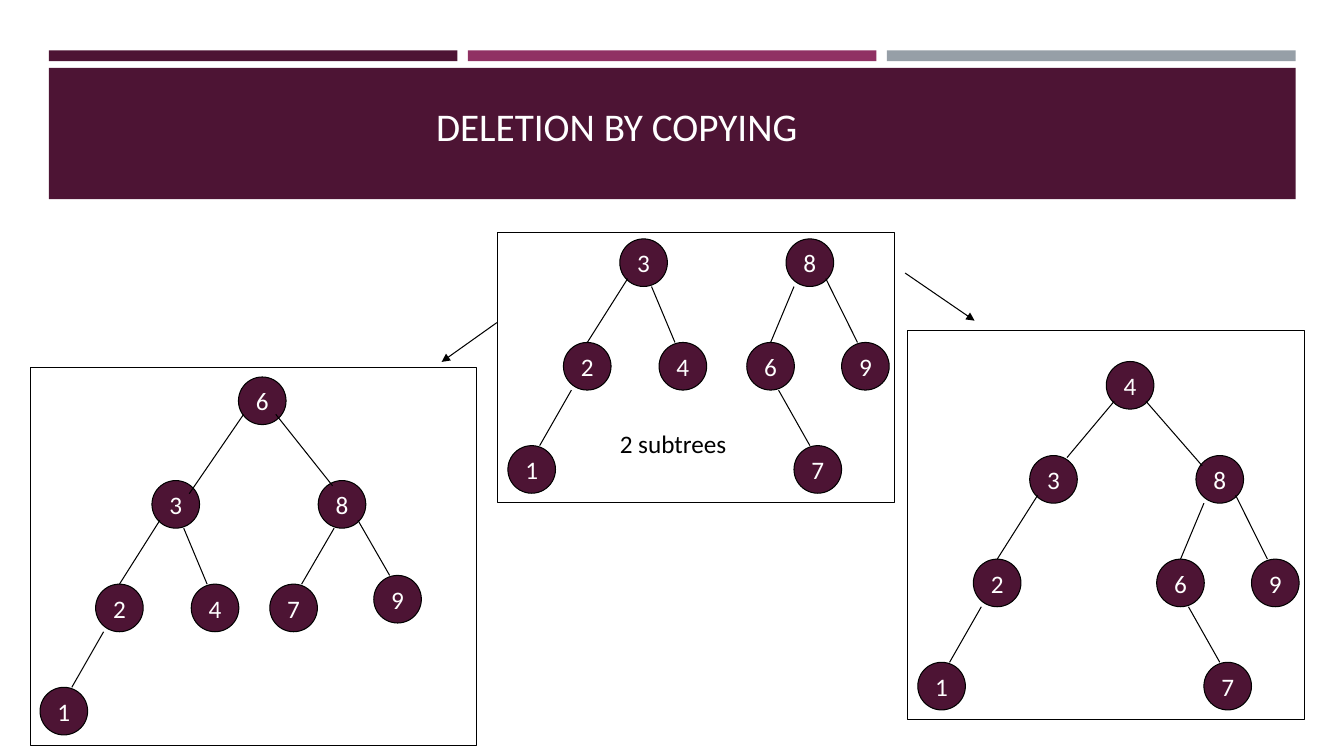
import pptx
import pptx.util
import pptx.dml.color
import pptx.enum.shapes
import pptx.enum.text
import pptx.oxml.ns
from lxml import etree

Cm, Pt = pptx.util.Cm, pptx.util.Pt
RGBColor = pptx.dml.color.RGBColor
PLUM = RGBColor(0x4D, 0x14, 0x34)
MAGENTA = RGBColor(0x90, 0x31, 0x63)
GREY = RGBColor(0x96, 0x9F, 0xA7)
WHITE = RGBColor(0xFF, 0xFF, 0xFF)
BLACK = RGBColor(0, 0, 0)

RADIUS = 0.6
SHAPE = pptx.enum.shapes.MSO_SHAPE
ANCHOR = pptx.enum.text.MSO_ANCHOR
ALIGN = pptx.enum.text.PP_ALIGN

# Node centres within a panel, measured from the row of 3 and 8
SUBTREE_NODES = {
    "3": (3.67, 0), "8": (7.86, 0), "6": (6.87, 2.61), "4": (4.66, 2.61),
    "2": (2.25, 2.61), "9": (9.26, 2.61), "1": (0.85, 5.21), "7": (8.06, 5.21),
}
# Parent, child, start from the parent's centre, end from the child's centre
LEFT_EDGES = [
    ("3", "2", (-0.4, 0.4), (0, -0.6)),
    ("2", "1", (-0.4, 0.6), (0.2, -0.6)),
]
EDGE_3_TO_4 = ("3", "4", (0.2, 0.6), (-0.2, -0.6))
EDGE_8_TO_9 = ("8", "9", (0.4, 0.4), (-0.2, -0.6))
RIGHT_EDGES = [
    ("8", "6", (-0.4, 0.6), (0, -0.6)),
    EDGE_8_TO_9,
    ("6", "7", (0.2, 0.6), (-0.2, -0.6)),
]
MERGED_AT_6_EDGES = [
    ("6", "3", (-0.47, 0.34), (0.34, -0.27)),
    ("6", "8", (0.34, 0.34), (-0.24, -0.47)),
    ("8", "7", (-0.2, 0.6), (0.2, -0.6)),
    EDGE_8_TO_9,
]
MERGED_AT_4_EDGES = [
    ("4", "3", (-0.4, 0.4), (0.34, -0.55)),
    ("4", "8", (0.4, 0.4), (-0.44, -0.34)),
]


def write(frame, wording, size, colour):
    run = frame.paragraphs[0].add_run()
    run.text = wording
    run.font.size = Pt(size)
    run.font.name = "Calibri"
    run.font.color.rgb = colour


def add_block(slide, kind, box, fill=None, outline=None):
    block = slide.shapes.add_shape(kind, *map(Cm, box))
    block.shadow.inherit = False
    if fill is None:
        block.fill.background()
    else:
        block.fill.solid()
        block.fill.fore_color.rgb = fill
    if outline is None:
        block.line.fill.background()
    else:
        block.line.color.rgb = outline
        block.line.width = Pt(0.75)
    return block


def add_line(slide, start, end, arrow=False):
    line = slide.shapes.add_connector(
        pptx.enum.shapes.MSO_CONNECTOR.STRAIGHT, *map(Cm, (*start, *end)))
    line.line.color.rgb = BLACK
    line.line.width = Pt(0.75)
    qn = pptx.oxml.ns.qn
    if arrow:
        etree.SubElement(line.line._get_or_add_ln(), qn("a:tailEnd"), type="triangle")
    etree.SubElement(line._element.spPr, qn("a:effectLst"))


def add_label(slide, box, wording, size, colour, anchor):
    frame = slide.shapes.add_textbox(*map(Cm, box)).text_frame
    frame.word_wrap = True
    frame.vertical_anchor = anchor
    write(frame, wording, size, colour)


def add_node(slide, centre, key):
    x, y = centre
    node = add_block(slide, SHAPE.OVAL,
                     (x - RADIUS, y - RADIUS, 2 * RADIUS, 2 * RADIUS), PLUM, BLACK)
    frame = node.text_frame
    frame.word_wrap = False
    frame.vertical_anchor = ANCHOR.MIDDLE
    frame.paragraphs[0].alignment = ALIGN.CENTER
    write(frame, key, 18, WHITE)


def add_header(slide, box):
    left, top, width, height = box
    gap = 0.26
    stripe_width = (width - 2 * gap) / 3
    for column, colour in enumerate((PLUM, MAGENTA, GREY)):
        add_block(slide, SHAPE.RECTANGLE,
                  (left + column * (stripe_width + gap), top, stripe_width, 0.27), colour)
    add_block(slide, SHAPE.RECTANGLE, (left, top + 0.44, width, height - 0.44), PLUM)
    add_label(slide, (left + 9.51, top - 0.56, 22.86, 3.18),
              "DELETION BY COPYING", 28, WHITE, ANCHOR.BOTTOM)


def add_tree_panel(slide, box, row_top, edges, moved=None):
    """Frame a tree; row_top places the row of 3 and 8, moved overrides node places."""
    left, top = box[:2]
    add_block(slide, SHAPE.RECTANGLE, box, outline=BLACK)
    places = {**SUBTREE_NODES, **(moved or {})}
    centres = {key: (left + x, top + row_top + y) for key, (x, y) in places.items()}
    for key, centre in centres.items():
        add_node(slide, centre, key)
    for parent, child, start, end in edges:
        add_line(slide,
                 [c + d for c, d in zip(centres[parent], start)],
                 [c + d for c, d in zip(centres[child], end)])


def add_subtrees_panel(slide, box):
    add_tree_panel(slide, box, 0.75, LEFT_EDGES + [EDGE_3_TO_4] + RIGHT_EDGES)
    add_label(slide, (box[0] + 2.82, box[1] + 4.8, 3.2, 1.02),
              "2 subtrees", 18, BLACK, ANCHOR.TOP)


def main():
    deck = pptx.Presentation()
    deck.slide_width, deck.slide_height = Cm(33.87), Cm(19.05)
    slide = deck.slides.add_slide(deck.slide_layouts[6])

    add_header(slide, (1.23, 1.27, 31.42, 3.75))
    add_subtrees_panel(slide, (12.55, 5.87, 10, 6.8))
    add_tree_panel(slide, (22.88, 8.33, 10, 9.8), 3.75,
                   LEFT_EDGES + RIGHT_EDGES + MERGED_AT_4_EDGES,
                   {"4": (5.6, -2.37)})
    add_tree_panel(slide, (0.76, 9.25, 11.25, 9.53), 3.46,
                   LEFT_EDGES + [EDGE_3_TO_4] + MERGED_AT_6_EDGES,
                   {"6": (5.85, -2.61), "7": (6.64, 2.61), "9": (9.26, 2.39)})
    add_line(slide, (22.81, 6.88), (24.56, 8.08), arrow=True)
    add_line(slide, (12.52, 8.13), (11.13, 9.12), arrow=True)

    deck.save("out.pptx")


if __name__ == "__main__":
    main()
